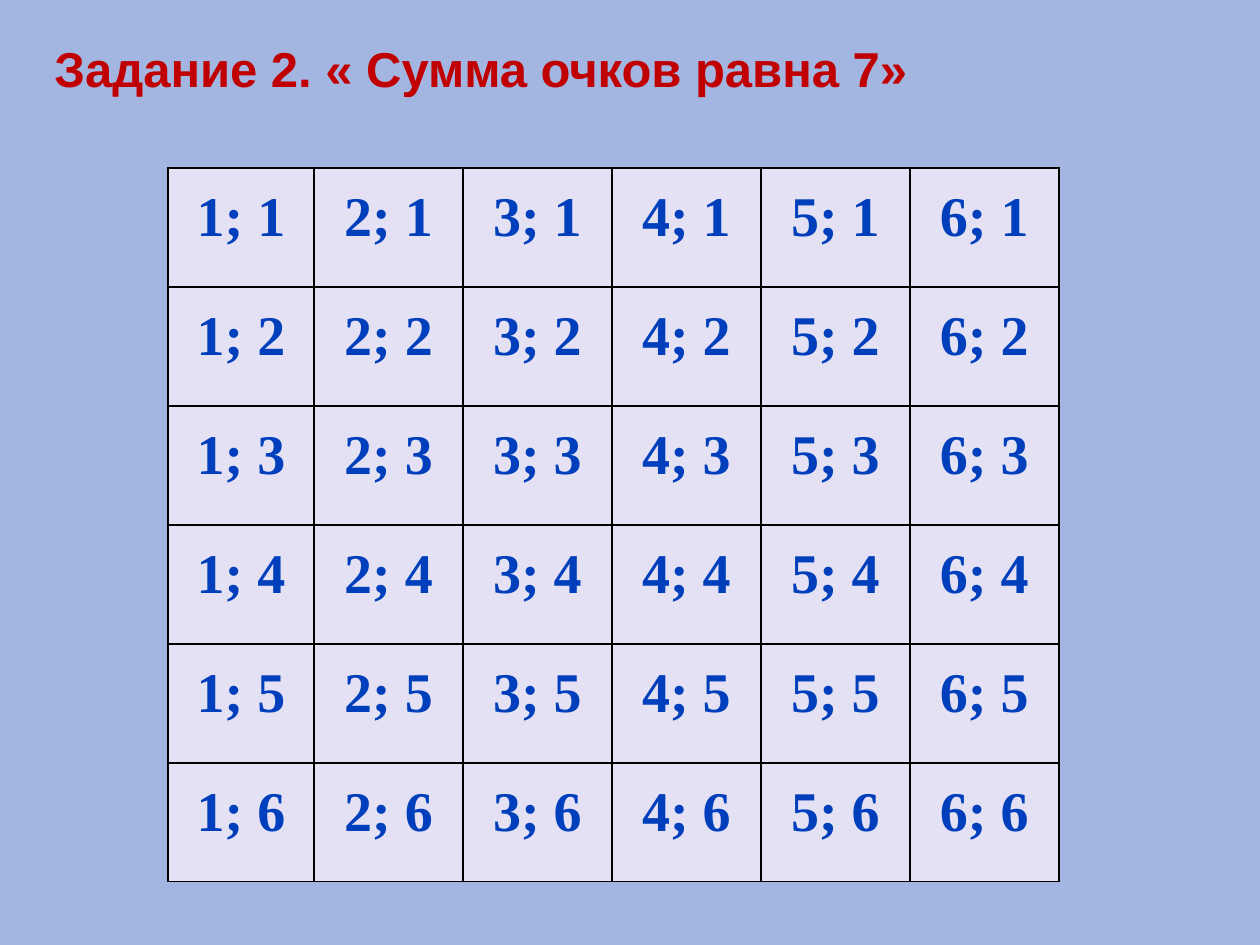
from lxml.etree import SubElement
from pptx import Presentation
from pptx.dml.color import RGBColor
from pptx.enum.text import MSO_AUTO_SIZE, PP_ALIGN
from pptx.oxml.ns import qn
from pptx.util import Emu, Pt

EMU_PER_PX = 914400 // 126
BACKGROUND = RGBColor(0xA3, 0xB6, 0xE2)
TITLE_RED = RGBColor(0xC0, 0x00, 0x00)
CELL_FILL = RGBColor(0xE5, 0xE1, 0xF4)
CELL_TEXT = RGBColor(0x00, 0x3F, 0xBC)
BORDER = RGBColor(0x00, 0x00, 0x00)

DIE_FACES = range(1, 7)
COLUMN_WIDTHS = [146] + [149] * 5
ROW_HEIGHT = 119
CELL_MARGIN = 9


def px(length):
    return Emu(length * EMU_PER_PX)


def add_run(paragraph, text, font_name, size, color):
    run = paragraph.add_run()
    run.text = text
    run.font.name = font_name
    run.font.size = Pt(size)
    run.font.bold = True
    run.font.color.rgb = color


def add_title(slide, text):
    box = slide.shapes.add_textbox(px(42), px(32), px(1004), px(72))
    frame = box.text_frame
    frame.word_wrap = True
    frame.auto_size = MSO_AUTO_SIZE.SHAPE_TO_FIT_TEXT
    add_run(frame.paragraphs[0], text, "Arial", 28, TITLE_RED)


def set_borders(cell):
    properties = cell._tc.get_or_add_tcPr()
    # Borders must come before the fill in the cell properties.
    for side in ("lnL", "lnR", "lnT", "lnB"):
        line = SubElement(properties, qn(f"a:{side}"), w=str(Pt(1)))
        fill = SubElement(line, qn("a:solidFill"))
        SubElement(fill, qn("a:srgbClr"), val=str(BORDER))


def fill_cell(cell, text):
    set_borders(cell)
    cell.fill.solid()
    cell.fill.fore_color.rgb = CELL_FILL
    cell.margin_left = cell.margin_right = px(CELL_MARGIN)
    cell.margin_top = cell.margin_bottom = px(CELL_MARGIN)
    paragraph = cell.text_frame.paragraphs[0]
    paragraph.alignment = PP_ALIGN.CENTER
    paragraph.line_spacing = 1.15
    paragraph.space_after = Pt(6)
    add_run(paragraph, text, "Times New Roman", 32, CELL_TEXT)


def add_outcome_table(slide):
    """Add the table of all outcomes of throwing two dice."""
    count = len(DIE_FACES)
    frame = slide.shapes.add_table(
        count, count, px(168), px(168),
        px(sum(COLUMN_WIDTHS)), px(ROW_HEIGHT * count))
    table = frame.table
    table.first_row = False
    table.horz_banding = False
    for column, width in zip(table.columns, COLUMN_WIDTHS):
        column.width = px(width)
    for row, second in zip(table.rows, DIE_FACES):
        row.height = px(ROW_HEIGHT)
        for cell, first in zip(row.cells, DIE_FACES):
            fill_cell(cell, f"{first}; {second}")


def main():
    presentation = Presentation()
    presentation.slide_width = px(1260)
    presentation.slide_height = px(945)
    slide = presentation.slides.add_slide(presentation.slide_layouts[6])
    slide.background.fill.solid()
    slide.background.fill.fore_color.rgb = BACKGROUND
    add_outcome_table(slide)
    add_title(slide, "Задание 2. « Сумма очков равна 7»")
    presentation.save("out.pptx")


if __name__ == "__main__":
    main()
